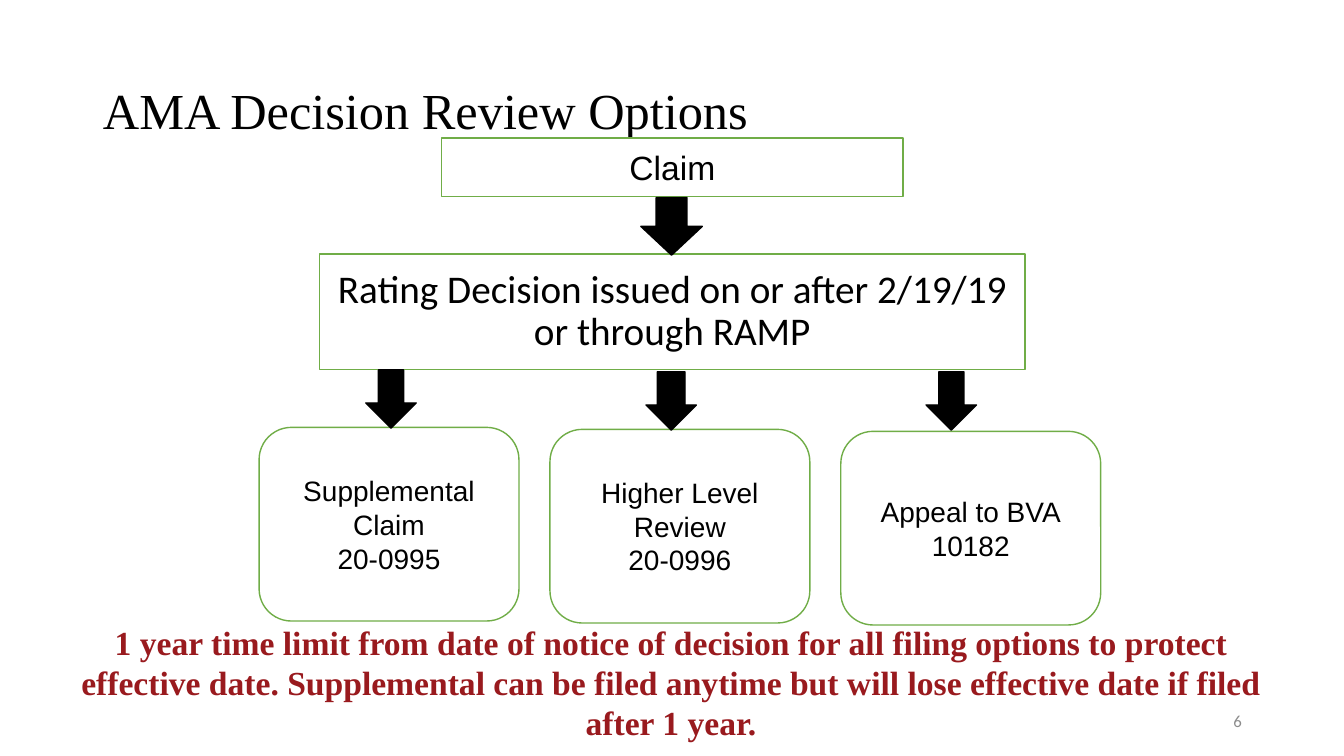
import pptx
import pptx.util
import pptx.dml.color
import pptx.enum.shapes
import pptx.enum.text

Cm = pptx.util.Cm
Pt = pptx.util.Pt
RGBColor = pptx.dml.color.RGBColor
SHAPE = pptx.enum.shapes.MSO_SHAPE
ALIGN = pptx.enum.text.PP_ALIGN
ANCHOR = pptx.enum.text.MSO_ANCHOR

BLACK = RGBColor(0x00, 0x00, 0x00)
WHITE = RGBColor(0xFF, 0xFF, 0xFF)
GREEN = RGBColor(0x70, 0xAD, 0x47)
GRAY = RGBColor(0x8C, 0x8C, 0x8C)
DARK_RED = RGBColor(0x99, 0x1A, 0x1E)

REVIEW_OPTIONS = [
    ("Supplemental Claim", "20-0995"),
    ("Higher Level Review", "20-0996"),
    ("Appeal to BVA", "10182"),
]


def write(holder, *lines, size, font="Arial", color=BLACK, bold=False,
          align=ALIGN.CENTER, anchor=ANCHOR.MIDDLE, spacing=None):
    frame = holder.text_frame
    frame.word_wrap = True
    frame.auto_size = pptx.enum.text.MSO_AUTO_SIZE.NONE
    frame.vertical_anchor = anchor
    for index, line in enumerate(lines):
        paragraph = frame.add_paragraph() if index else frame.paragraphs[0]
        paragraph.alignment = align
        paragraph.line_spacing = spacing
        run = paragraph.add_run()
        run.text = line
        run.font.size = Pt(size)
        run.font.name = font
        run.font.bold = bold
        run.font.color.rgb = color


def add_block(slide, preset, left, top, width, height, fill=WHITE, line=GREEN):
    block = slide.shapes.add_shape(preset, Cm(left), Cm(top), Cm(width), Cm(height))
    block.shadow.inherit = False
    block.fill.solid()
    block.fill.fore_color.rgb = fill
    block.line.color.rgb = line
    block.line.width = Pt(1)
    return block


def add_arrow(slide, left, top, width, height):
    return add_block(slide, SHAPE.DOWN_ARROW, left, top, width, height, BLACK, BLACK)


def add_title(slide, left, top, width, height):
    title = slide.shapes.title
    title.left, title.top = Cm(left), Cm(top)
    title.width, title.height = Cm(width), Cm(height)
    write(title, "AMA Decision Review Options", size=36, font="Times New Roman",
          align=ALIGN.LEFT, spacing=0.9)


def add_decision(slide, left, top, width, height):
    rating = add_block(slide, SHAPE.RECTANGLE, left, top + 2.92, width, height - 2.92)
    write(rating, "Rating Decision issued on or after 2/19/19 or through RAMP",
          size=28, font="Calibri", spacing=0.9)
    claim = add_block(slide, SHAPE.RECTANGLE, left + 3.08, top, 11.63, 1.47)
    write(claim, "Claim", size=24)
    add_arrow(slide, left + 8.1, top + 1.5, 1.55, 1.45)


def add_review_options(slide, left, top, width, height):
    card_width, card_height = 6.55, 4.88
    card_step = (width - card_width) / (len(REVIEW_OPTIONS) - 1)
    card_top = top + height - card_height - 0.1
    for index, lines in enumerate(REVIEW_OPTIONS):
        card = add_block(slide, SHAPE.ROUNDED_RECTANGLE, left + index * card_step,
                         card_top + index * 0.05, card_width, card_height)
        write(card, *lines, size=20)
    for index in range(len(REVIEW_OPTIONS)):
        arrow = add_arrow(slide, left + 2.69 + index * 7.06,
                          top + min(index, 1) * 0.05, 1.27, 1.47)
        if index == 1:
            arrow.adjustments[0] = 0.55


def add_note(slide, text, left, top, width, height, **style):
    note = slide.shapes.add_textbox(Cm(left), Cm(top), Cm(width), Cm(height))
    write(note, text, **style)


def main():
    deck = pptx.Presentation()
    deck.slide_width, deck.slide_height = Cm(33.87), Cm(19.05)
    slide = deck.slides.add_slide(deck.slide_layouts[5])
    add_title(slide, 2.34, 1.02, 29.21, 3.68)
    add_note(slide, "6", 23.93, 17.65, 7.62, 1.02,
             size=12, font="Calibri", color=GRAY, align=ALIGN.RIGHT)
    add_decision(slide, 8.05, 3.48, 17.78, 5.84)
    add_review_options(slide, 6.53, 9.32, 21.21, 6.43)
    add_note(slide, "1 year time limit from date of notice of decision for all filing "
             "options to protect effective date. Supplemental can be filed anytime but "
             "will lose effective date if filed after 1 year.",
             1.57, 15.54, 30.68, 3.33, size=24, font="Times New Roman",
             color=DARK_RED, bold=True, anchor=ANCHOR.TOP)
    deck.save("out.pptx")


if __name__ == "__main__":
    main()
